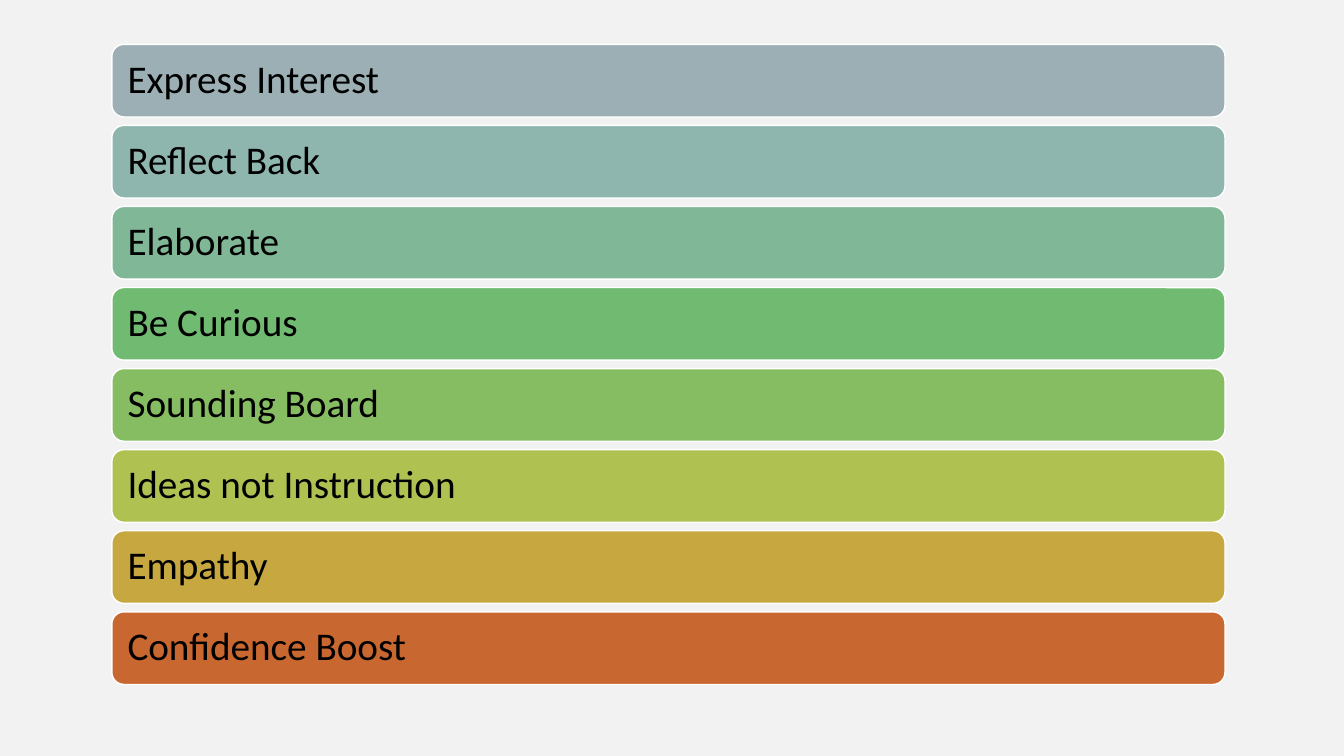
from pptx import Presentation
from pptx.dml.color import RGBColor
from pptx.enum.shapes import MSO_SHAPE
from pptx.enum.text import MSO_ANCHOR, PP_ALIGN
from pptx.util import Inches, Pt

# Content: label and bar colour, top to bottom
BARS = [
    ("Express Interest", "9BAFB5"),
    ("Reflect Back", "8EB6AF"),
    ("Elaborate", "80B897"),
    ("Be Curious", "71BA71"),
    ("Sounding Board", "87BD62"),
    ("Ideas not Instruction", "AEC151"),
    ("Empathy", "C6A740"),
    ("Confidence Boost", "C96731"),
]
COLORS = {"background": "F2F2F2", "outline": "FFFFFF", "text": "000000"}

# Layout in inches: bars spread evenly between the first and last top
LEFT, WIDTH, HEIGHT = 1.11, 11.04, 0.72
FIRST_TOP, LAST_TOP = 0.44, 6.07
PITCH = (LAST_TOP - FIRST_TOP) / (len(BARS) - 1)
INSET = Inches(0.12)


def rgb(name):
    return RGBColor.from_string(COLORS.get(name, name))


def add_bar(s, top, label, color):
    bar = s.shapes.add_shape(MSO_SHAPE.ROUNDED_RECTANGLE, Inches(LEFT), Inches(top),
                             Inches(WIDTH), Inches(HEIGHT))
    bar.shadow.inherit = False
    bar.fill.solid()
    bar.fill.fore_color.rgb = rgb(color)
    bar.line.color.rgb = rgb("outline")
    bar.line.width = Pt(1)

    # Label
    tf = bar.text_frame
    tf.word_wrap = True
    tf.vertical_anchor = MSO_ANCHOR.MIDDLE
    tf.margin_left = tf.margin_right = tf.margin_top = tf.margin_bottom = INSET
    p = tf.paragraphs[0]
    p.text = label
    p.alignment = PP_ALIGN.LEFT
    p.line_spacing = 0.9
    p.font.name = "Calibri"
    p.font.size = Pt(28)
    p.font.color.rgb = rgb("text")


def main():
    prs = Presentation()
    prs.slide_width, prs.slide_height = Inches(13.33), Inches(7.5)
    s = prs.slides.add_slide(prs.slide_layouts[6])
    s.background.fill.solid()
    s.background.fill.fore_color.rgb = rgb("background")

    # Stack of bars
    for i, (label, color) in enumerate(BARS):
        add_bar(s, FIRST_TOP + i * PITCH, label, color)

    prs.save("out.pptx")


if __name__ == "__main__":
    main()
